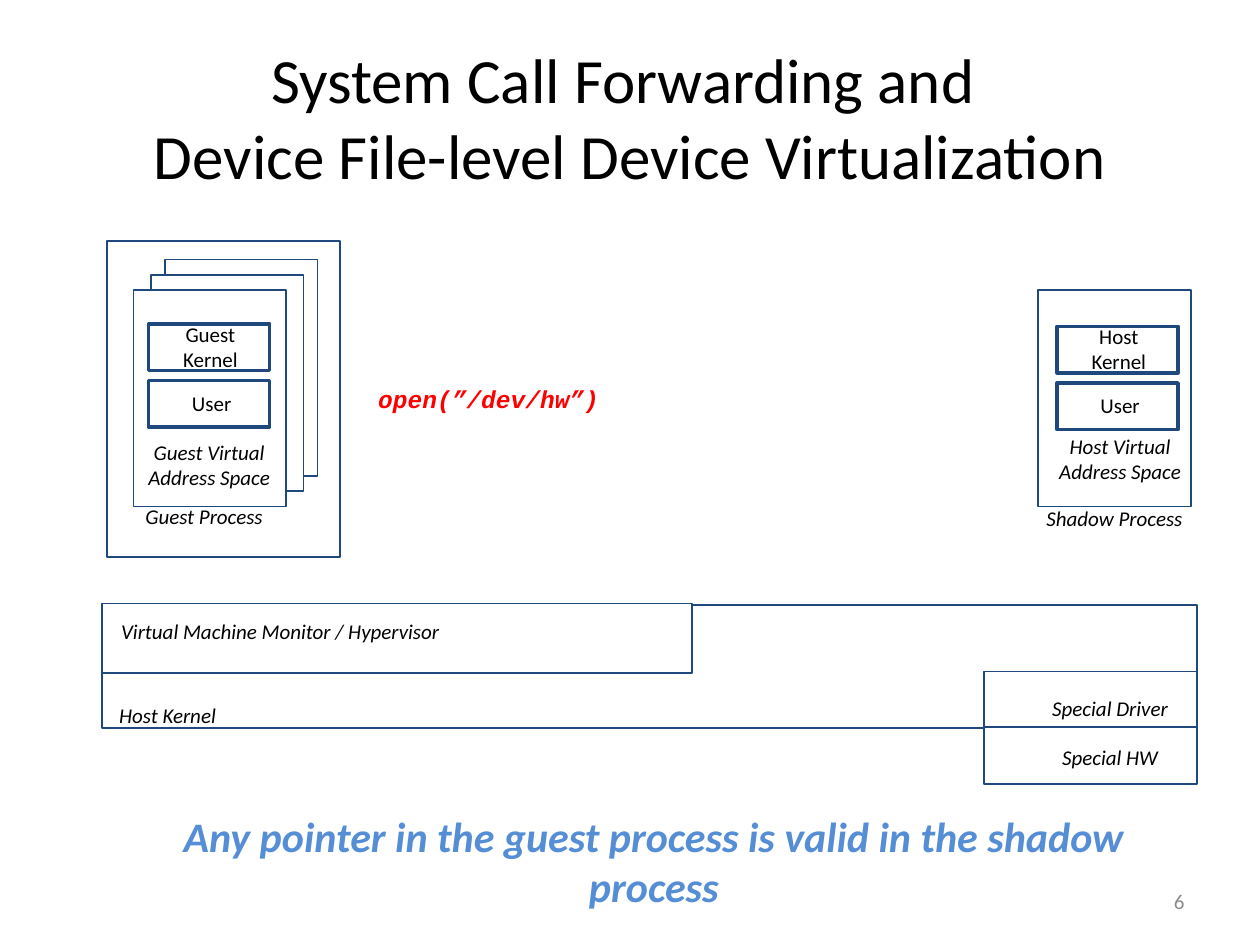
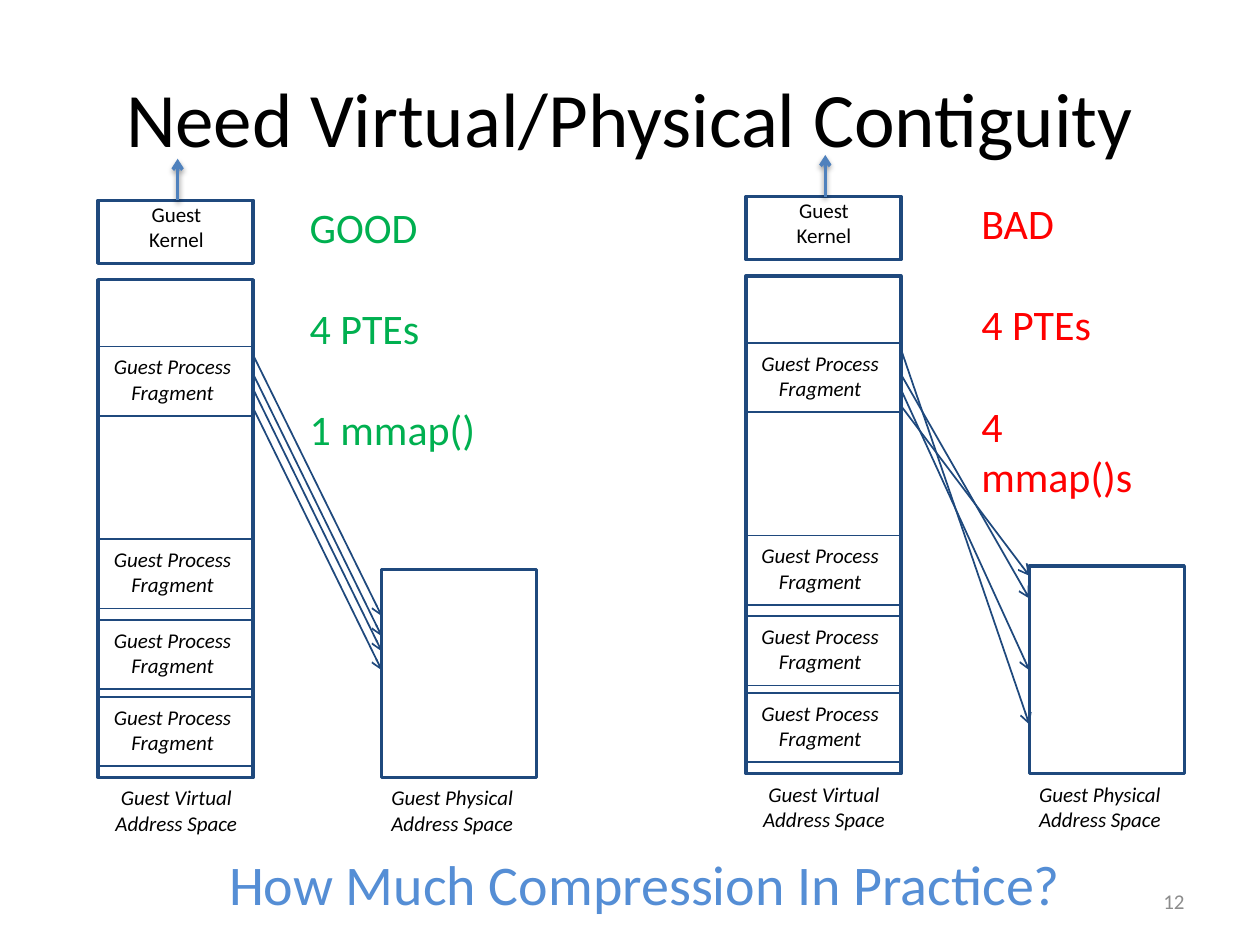
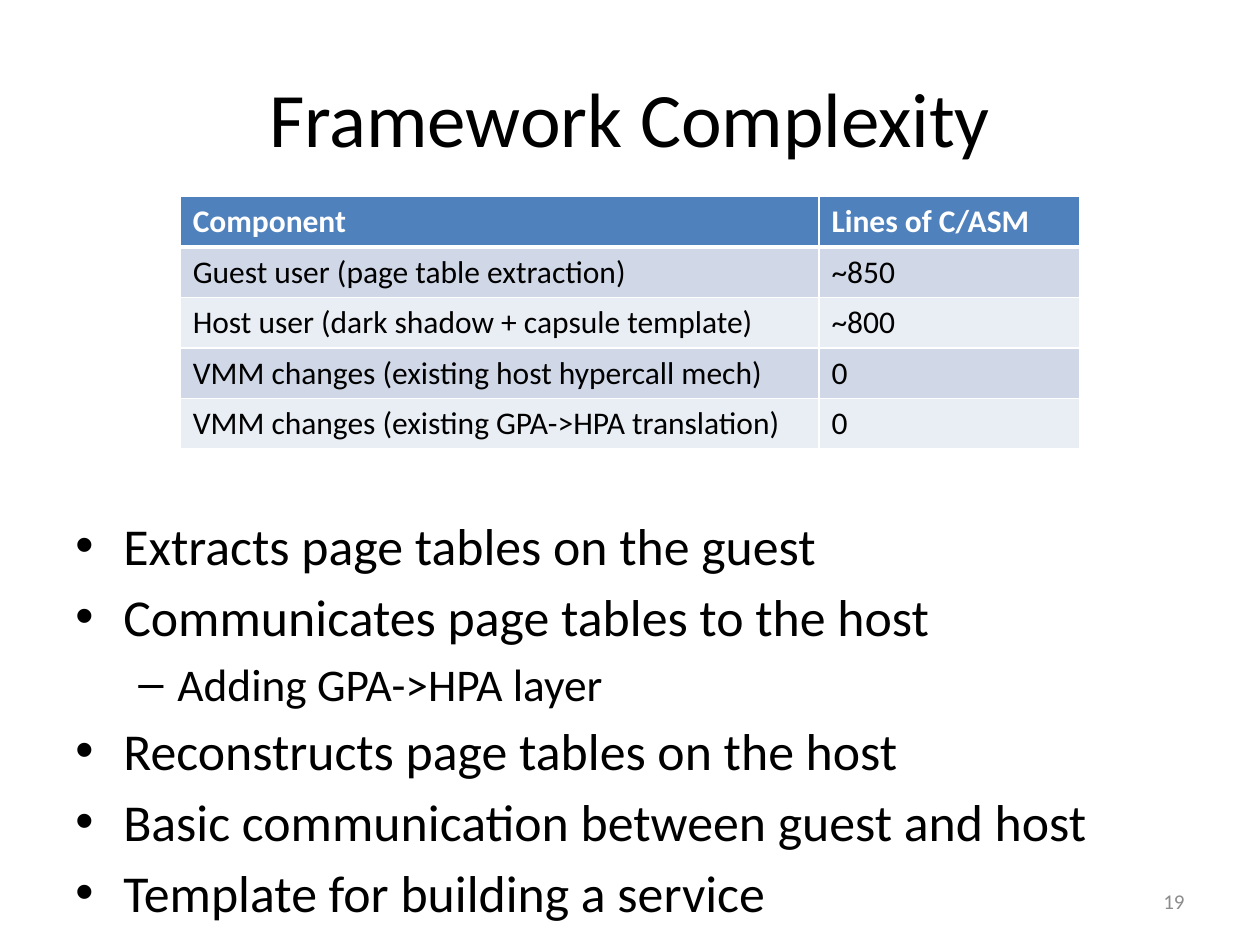
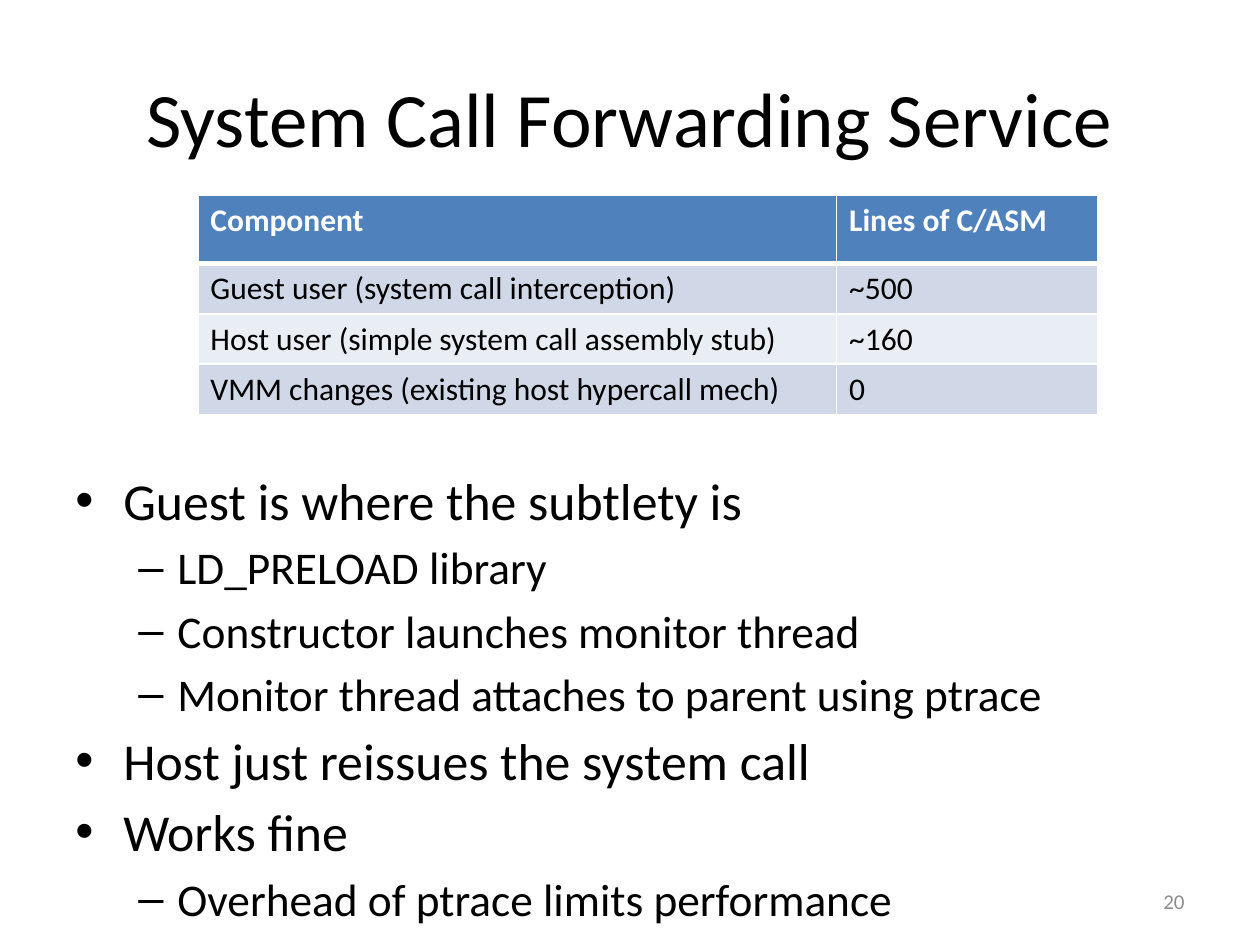
from pptx import Presentation
from pptx.dml.color import RGBColor
from pptx.enum.shapes import MSO_CONNECTOR, MSO_SHAPE
from pptx.enum.text import MSO_ANCHOR, PP_ALIGN
from pptx.oxml import parse_xml
from pptx.oxml.ns import nsdecls
from pptx.util import Inches, Pt

NAVY, BLUE, SKY = "1F497D", "4F81BD", "558ED5"
WHITE, BLACK, GREY = "FFFFFF", "000000", "8C8C8C"
RED, GREEN = "FF0000", "00B050"
BANDS = ("D0D8E8", "E9EDF4")
PLAIN = {"name": "Calibri", "size": Pt(12), "color": BLACK, "bold": False, "italic": False}
LABEL = {**PLAIN, "italic": True}
TITLE = {**PLAIN, "size": Pt(44)}
PAGE_NUMBER = {**PLAIN, "color": GREY}
CELL = {**PLAIN, "size": Pt(18)}
HEADING = {**CELL, "color": WHITE, "bold": True}
CALL = {**LABEL, "name": "Courier New", "size": Pt(14), "color": RED, "bold": True}
CLAIM = {**LABEL, "size": Pt(24), "color": SKY, "bold": True}
QUESTION = {**PLAIN, "size": Pt(32), "color": SKY}
BULLETS = (
    {"char": "•", "size": 29.6, "margin": 0.38, "hang": 0.38},
    {"char": "–", "size": 25.9, "margin": 0.81, "hang": 0.31},
)
SHADOW = (
    '<a:outerShdw blurRad="39370" dist="20320" dir="5400000" rotWithShape="0">'
    '<a:srgbClr val="000000"><a:alpha val="38000"/></a:srgbClr></a:outerShdw>'
)


def rgb(value):
    return RGBColor.from_string(value)


def xml(tag, attributes="", content=""):
    return parse_xml(f"<a:{tag} {nsdecls('a')} {attributes}>{content}</a:{tag}>")


def apply_format(paragraph, style):
    for run in paragraph.runs:
        for attribute, value in style.items():
            if attribute == "color":
                run.font.color.rgb = rgb(value)
            else:
                setattr(run.font, attribute, value)


def add_text(slide, lines, place, style=LABEL, align=PP_ALIGN.CENTER,
             anchor=MSO_ANCHOR.TOP, wrap=True, gap=0):
    frame = slide.shapes.add_textbox(*map(Inches, place)).text_frame
    frame.word_wrap = wrap
    frame.vertical_anchor = anchor
    for index, line in enumerate(lines):
        paragraph = frame.add_paragraph() if index else frame.paragraphs[0]
        paragraph.text = line
        paragraph.alignment = align
        if index and gap:
            paragraph.space_before = Pt(gap)
        apply_format(paragraph, style)
    return frame


def add_box(slide, place, width=1, fill=None):
    box = slide.shapes.add_shape(MSO_SHAPE.RECTANGLE, *map(Inches, place))
    box.shadow.inherit = False
    if fill:
        box.fill.solid()
        box.fill.fore_color.rgb = rgb(fill)
    else:
        box.fill.background()
    box.line.color.rgb = rgb(NAVY)
    box.line.width = Pt(width)


def add_arrow(slide, start, end, color=NAVY, width=1, effect=""):
    arrow = slide.shapes.add_connector(MSO_CONNECTOR.STRAIGHT, *map(Inches, (*start, *end)))
    arrow.line.color.rgb = rgb(color)
    arrow.line.width = Pt(width)
    arrow.line._get_or_add_ln().append(xml("tailEnd", 'type="arrow"'))
    arrow._element.spPr.append(xml("effectLst", content=effect))


def add_slide(deck, title, number, style=TITLE):
    slide = deck.slides.add_slide(deck.slide_layouts[6])
    add_text(slide, [title], (0.5, 0.3, 9, 1.25), style, anchor=MSO_ANCHOR.MIDDLE)
    add_text(slide, [str(number)], (7.17, 6.95, 2.33, 0.4), PAGE_NUMBER,
             PP_ALIGN.RIGHT, MSO_ANCHOR.MIDDLE)
    return slide


def add_bullets(slide, place, items):
    frame = add_text(slide, [text for _, text in items], place, align=PP_ALIGN.LEFT)
    for paragraph, (level, _) in zip(frame.paragraphs, items):
        bullet = BULLETS[level]
        paragraph.level = level
        paragraph.space_before = Pt(5)
        apply_format(paragraph, {**PLAIN, "size": Pt(bullet["size"])})
        properties = paragraph._p.get_or_add_pPr()
        properties.set("marL", str(Inches(bullet["margin"])))
        properties.set("indent", str(-Inches(bullet["hang"])))
        properties.append(xml("buFont", 'typeface="Arial"'))
        properties.append(xml("buChar", f'char="{bullet["char"]}"'))


def add_border(cell, side, width):
    cell._tc.get_or_add_tcPr().append(xml(
        f"ln{side}", f'w="{Pt(width)}"',
        f'<a:solidFill><a:srgbClr val="{WHITE}"/></a:solidFill>'))


def add_code_size_table(slide, left, top, heading_height, components):
    rows = [("Component", "Lines of C/ASM"), *components]
    heights = [heading_height] + [0.4] * len(components)
    table = slide.shapes.add_table(
        len(rows), 2, *map(Inches, (left, top, 7.14, sum(heights)))).table
    for column, width in zip(table.columns, (5.07, 2.07)):
        column.width = Inches(width)
    for row_index, (values, height) in enumerate(zip(rows, heights)):
        table.rows[row_index].height = Inches(height)
        for column_index, value in enumerate(values):
            cell = table.cell(row_index, column_index)
            cell.text = value
            apply_format(cell.text_frame.paragraphs[0], CELL if row_index else HEADING)
            for side in "LRTB":
                thick = (row_index, side) in ((0, "B"), (1, "T"))
                add_border(cell, side, 3 if thick else 1)
            cell.fill.solid()
            cell.fill.fore_color.rgb = rgb(BANDS[(row_index - 1) % 2] if row_index else BLUE)


def add_kernel_and_user(slide, left, top, kernel_name):
    add_box(slide, (left, top, 0.96, 0.37), 2)
    add_text(slide, [kernel_name, "Kernel"], (left + 0.17, top - 0.07, 0.64, 0.5),
             PLAIN, wrap=False)
    add_box(slide, (left, top + 0.45, 0.96, 0.37), 2)
    add_text(slide, ["User"], (left + 0.24, top + 0.48, 0.52, 0.3), PLAIN, wrap=False)


def add_mapping(slide, left, top, pages, verdict, verdict_left, verdict_color):
    add_box(slide, (left, top + 0.63, 1.23, 3.95), 2)
    add_box(slide, (left, top, 1.23, 0.5), 2)
    add_arrow(slide, (left + 0.63, top), (left + 0.63, top - 0.33), BLUE, 2, SHADOW)
    add_text(slide, ["Guest", "Kernel"], (left + 0.21, top - 0.04, 0.82, 0.68),
             PLAIN, wrap=False)
    for fragment_top in (1.16, 2.69, 3.33, 3.94):
        add_box(slide, (left, top + fragment_top, 1.23, 0.55))
        add_text(slide, ["Guest Process", "Fragment"],
                 (left - 0.16, top + fragment_top + 0.01, 1.5, 0.5))
    add_box(slide, (left + 2.25, top + 2.93, 1.23, 1.65), 2)
    for space, offset in (("Guest Virtual", -0.16), ("Guest Physical", 2.03)):
        add_text(slide, [space, "Address Space"],
                 (left + offset, top + 4.59, 1.56, 0.68), wrap=False)
    for virtual, physical in pages:
        add_arrow(slide, (left + 1.23, virtual), (left + 2.25, physical))
    add_text(slide, verdict, (verdict_left, top - 0.04, 1.6, 2.12),
             {**PLAIN, "size": Pt(24), "color": verdict_color},
             PP_ALIGN.LEFT, wrap=False, gap=29)


def build_forwarding(deck):
    slide = add_slide(deck, "System Call Forwarding and \vDevice File-level Device Virtualization",
                      6, {**TITLE, "size": Pt(36)})
    host_kernel = (0.81, 4.8, 8.69, 0.98)
    hypervisor = (0.81, 4.79, 4.68, 0.55)
    shadow_process = (8.24, 2.3, 1.21, 1.72)
    guest_machine = (0.85, 1.91, 1.85, 2.51)
    guest_processes = [(left, top, 1.21, 1.72)
                       for left, top in ((1.31, 2.06), (1.2, 2.18), (1.06, 2.3))]
    driver, hardware = [(7.81, top, 1.69, 0.45) for top in (5.33, 5.77)]
    for place in (host_kernel, hypervisor, shadow_process, guest_machine,
                  *guest_processes, driver, hardware):
        add_box(slide, place, fill=WHITE)
    add_kernel_and_user(slide, 1.18, 2.57, "Guest")
    add_kernel_and_user(slide, 8.39, 2.59, "Host")
    for lines, place in (
        (["Guest Virtual", "Address Space"], (1.05, 3.44, 1.22, 0.5)),
        (["Host Virtual", "Address Space"], (8.28, 3.39, 1.22, 0.5)),
        (["Guest Process"], (1.05, 3.95, 1.14, 0.3)),
        (["Shadow Process"], (8.2, 3.96, 1.29, 0.3)),
        (["Virtual Machine Monitor / Hypervisor"], (0.85, 4.86, 2.75, 0.3)),
        (["Host Kernel"], (0.72, 5.53, 1.22, 0.3)),
        (["Special Driver"], (8.2, 5.47, 1.22, 0.3)),
        (["Special HW"], (8.2, 5.86, 1.22, 0.3)),
    ):
        add_text(slide, lines, place, wrap=False)
    add_text(slide, ["Any pointer in the guest process is valid in the shadow process"],
             (0.81, 6.38, 8.76, 0.5), CLAIM)
    add_text(slide, ["open(”/dev/hw”)"], (2.9, 3, 1.96, 0.34), CALL, wrap=False)


def build_contiguity(deck):
    slide = add_slide(deck, "Need Virtual/Physical Contiguity", 12)
    contiguous = ((2.82, 4.89), (2.97, 5.05), (3.09, 5.17), (3.24, 5.32))
    scattered = ((2.77, 5.75), (2.97, 4.75), (3.09, 5.32), (3.22, 4.57))
    add_mapping(slide, 0.78, 1.59, contiguous, ["GOOD", "4 PTEs", "1 mmap()"], 2.36, GREEN)
    add_mapping(slide, 5.92, 1.56, scattered, ["BAD", "4 PTEs", "4 mmap()s"], 7.69, RED)
    add_text(slide, ["How Much Compression In Practice?"], (0.62, 6.38, 9, 1.25),
             QUESTION, anchor=MSO_ANCHOR.MIDDLE)


def build_framework(deck):
    slide = add_slide(deck, "Framework Complexity", 19)
    add_code_size_table(slide, 1.43, 1.56, 0.4, [
        ("Guest user (page table extraction)", "~850"),
        ("Host user (dark shadow + capsule template)", "~800"),
        ("VMM changes (existing host hypercall mech)", "0"),
        ("VMM changes (existing GPA->HPA translation)", "0"),
    ])
    add_bullets(slide, (0.5, 4.03, 9.28, 3.12), [
        (0, "Extracts page tables on the guest"),
        (0, "Communicates page tables to the host"),
        (1, "Adding GPA->HPA layer"),
        (0, "Reconstructs page tables on the host"),
        (0, "Basic communication between guest and host"),
        (0, "Template for building a service"),
    ])


def build_service(deck):
    slide = add_slide(deck, "System Call Forwarding Service", 20)
    add_bullets(slide, (0.5, 3.67, 9.28, 3.48), [
        (0, "Guest is where the subtlety is"),
        (1, "LD_PRELOAD library"),
        (1, "Constructor launches monitor thread"),
        (1, "Monitor thread attaches to parent using ptrace"),
        (0, "Host just reissues the system call"),
        (0, "Works fine"),
        (1, "Overhead of ptrace limits performance"),
    ])
    add_code_size_table(slide, 1.57, 1.55, 0.54, [
        ("Guest user (system call interception)", "~500"),
        ("Host user (simple system call assembly stub)", "~160"),
        ("VMM changes (existing host hypercall mech)", "0"),
    ])


def main():
    deck = Presentation()
    deck.slide_width, deck.slide_height = Inches(10), Inches(7.5)
    for build in (build_forwarding, build_contiguity, build_framework, build_service):
        build(deck)
    deck.save("out.pptx")


if __name__ == "__main__":
    main()
